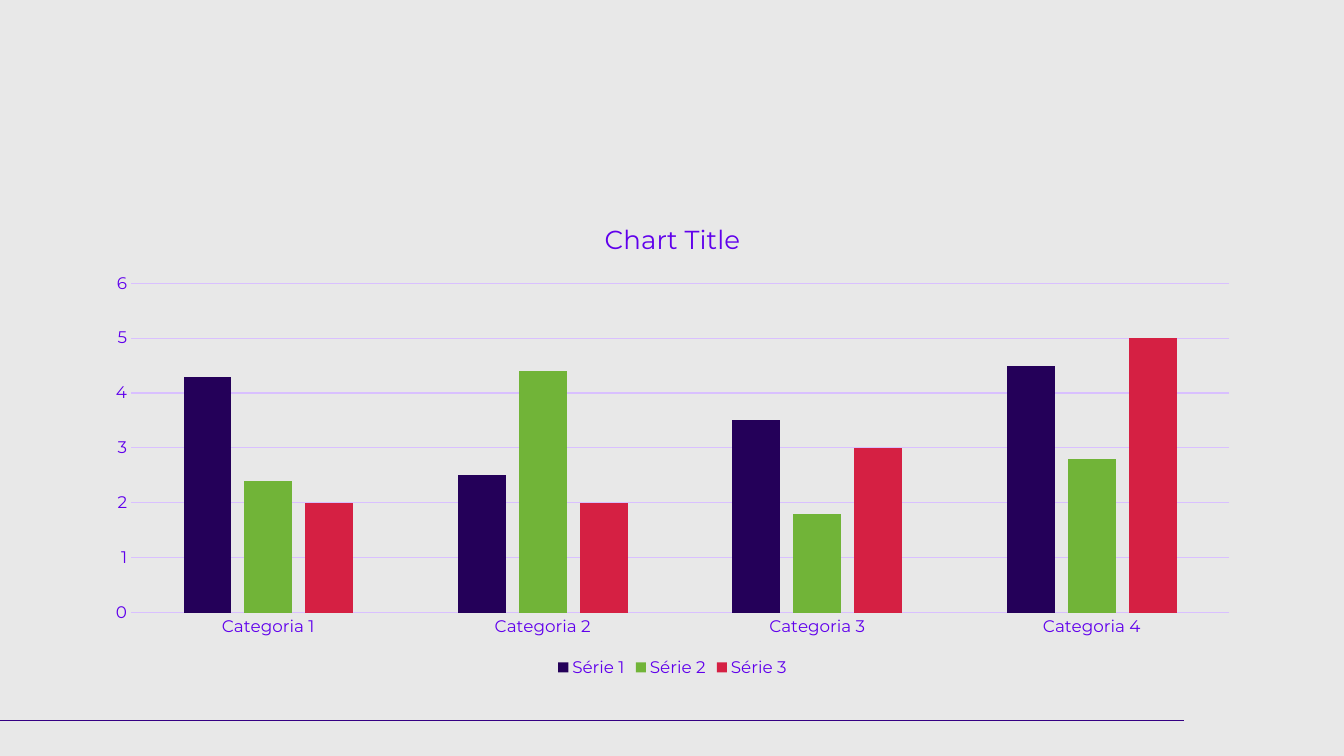
from dataclasses import dataclass

from lxml import etree
from pptx import Presentation
from pptx.chart.data import CategoryChartData
from pptx.dml.color import RGBColor
from pptx.enum.chart import XL_CHART_TYPE, XL_LEGEND_POSITION, XL_TICK_MARK
from pptx.enum.shapes import MSO_CONNECTOR
from pptx.oxml.ns import qn
from pptx.util import Inches, Pt

CLUSTERED = XL_CHART_TYPE.COLUMN_CLUSTERED
LEGEND_BOTTOM = XL_LEGEND_POSITION.BOTTOM
NO_TICK = XL_TICK_MARK.NONE
STRAIGHT = MSO_CONNECTOR.STRAIGHT
BLANK_LAYOUT = 6


@dataclass(frozen=True)
class Theme:
    font: str = "Montserrat"
    background: str = "E8E8E8"
    rule: str = "350083"
    text: str = "6000EC"
    grid: str = "D9C0FF"
    series: tuple = ("240059", "71B438", "D52043")
    base_size: float = 10
    label_size: float = 12
    title_size: float = 18.6
    rule_width: float = 1
    grid_width: float = 0.75


THEME = Theme()
CATEGORIES = ["Categoria 1", "Categoria 2", "Categoria 3", "Categoria 4"]
SERIES = {
    "Série 1": (4.3, 2.5, 3.5, 4.5),
    "Série 2": (2.4, 4.4, 1.8, 2.8),
    "Série 3": (2, 2, 3, 5),
}


def style_font(font, size, color=THEME.text):
    font.name = THEME.font
    font.size = Pt(size)
    font.bold = False
    font.color.rgb = RGBColor.from_string(color)


def style_line(line, color, width):
    line.color.rgb = RGBColor.from_string(color)
    line.width = Pt(width)


def add_footer_rule(slide):
    rule = slide.shapes.add_connector(
        STRAIGHT, Inches(11.74), Inches(7.15), Inches(0), Inches(7.15))
    style_line(rule.line, THEME.rule, THEME.rule_width)
    etree.SubElement(rule._element.spPr, qn("a:effectLst"))


def style_axis(axis):
    axis.major_tick_mark = NO_TICK
    axis.minor_tick_mark = NO_TICK
    style_font(axis.tick_labels.font, THEME.label_size)


def style_axes(chart):
    categories, values = chart.category_axis, chart.value_axis
    for axis in (categories, values):
        style_axis(axis)
    style_line(categories.format.line, THEME.grid, THEME.grid_width)
    values.format.line.fill.background()
    values.minimum_scale = 0
    values.maximum_scale = 6
    values.major_unit = 1
    values.has_major_gridlines = True
    style_line(values.major_gridlines.format.line, THEME.grid, THEME.grid_width)


def style_columns(chart):
    plot = chart.plots[0]
    plot.vary_by_categories = False
    plot.gap_width = 219
    plot.overlap = -27
    for series, color in zip(plot.series, THEME.series):
        series.format.fill.solid()
        series.format.fill.fore_color.rgb = RGBColor.from_string(color)


def add_chart_title(chart, text):
    chart.has_title = True
    chart.chart_title.include_in_layout = False
    run = chart.chart_title.text_frame.paragraphs[0].add_run()
    run.text = text
    style_font(run.font, THEME.title_size)


def add_legend(chart):
    chart.has_legend = True
    chart.legend.position = LEGEND_BOTTOM
    chart.legend.include_in_layout = False
    style_font(chart.legend.font, THEME.label_size)


def add_column_chart(slide):
    data = CategoryChartData()
    data.categories = CATEGORIES
    for name, values in SERIES.items():
        data.add_series(name, values)
    chart = slide.shapes.add_chart(
        CLUSTERED, Inches(0.92), Inches(2), Inches(11.5), Inches(4.76), data).chart
    style_font(chart.font, THEME.base_size, THEME.series[0])
    add_chart_title(chart, "Chart Title")
    style_axes(chart)
    style_columns(chart)
    add_legend(chart)


def main():
    presentation = Presentation()
    presentation.slide_width = Inches(13.33)
    presentation.slide_height = Inches(7.5)
    slide = presentation.slides.add_slide(presentation.slide_layouts[BLANK_LAYOUT])
    slide.background.fill.solid()
    slide.background.fill.fore_color.rgb = RGBColor.from_string(THEME.background)
    add_footer_rule(slide)
    add_column_chart(slide)
    presentation.save("out.pptx")


if __name__ == "__main__":
    main()
